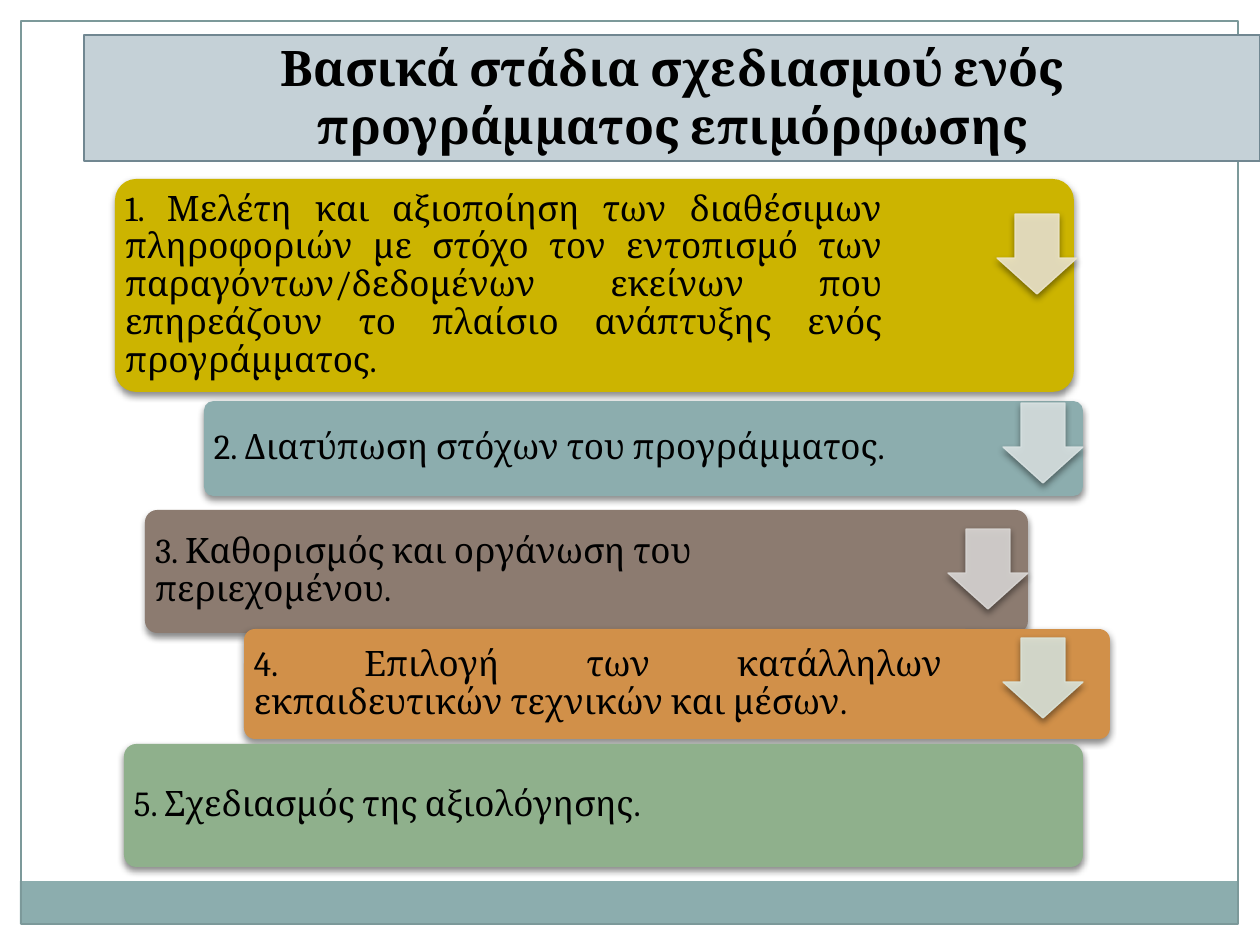
from lxml.etree import SubElement
from pptx import Presentation
from pptx.dml.color import RGBColor
from pptx.enum.shapes import MSO_SHAPE
from pptx.enum.text import MSO_ANCHOR, PP_ALIGN
from pptx.oxml.ns import qn
from pptx.util import Emu, Pt

PIXELS_PER_INCH = 126
SLIDE_SIZE = (1260, 945)
FONT = "Cambria"
COLORS = {
    "text": "000000", "shadow": "000000", "band": "8CADAE", "frame": "7C999A",
    "title": "C5D1D7", "title_line": "718791",
    "gold": "CCB400", "teal": "8CADAE", "brown": "8C7B70",
    "orange": "D19049", "green": "8FB08C",
    "gold_light": "ECE5CC", "teal_light": "DAE3E3",
    "brown_light": "DAD7D5", "green_light": "DBE4DA",
}
BAND = (20, 881, 1218, 43)
FRAME = (21, 21, 1217, 903)
TITLE = ("Βασικά στάδια σχεδιασμού ενός προγράμματος επιμόρφωσης", (84, 35, 1176, 126))
STAGES = [
    ("1. Μελέτη και αξιοποίηση των διαθέσιμων πληροφοριών με στόχο τον εντοπισμό των "
     "παραγόντων/δεδομένων εκείνων που επηρεάζουν το πλαίσιο ανάπτυξης ενός προγράμματος.",
     (115, 179, 959, 213), 777, "gold", PP_ALIGN.JUSTIFY),
    ("2. Διατύπωση στόχων του προγράμματος.",
     (204, 401, 879, 95), 718, "teal", PP_ALIGN.LEFT),
    ("3. Καθορισμός και οργάνωση του περιεχομένου.",
     (145, 510, 883, 123), 722, "brown", PP_ALIGN.LEFT),
    ("4. Επιλογή των κατάλληλων εκπαιδευτικών τεχνικών και μέσων.",
     (244, 629, 866, 110), 708, "orange", PP_ALIGN.JUSTIFY),
    ("5. Σχεδιασμός της αξιολόγησης.",
     (124, 744, 959, 123), 784, "green", PP_ALIGN.JUSTIFY),
]
ARROW_SIZE = 80
ARROWS = [
    (997, 214, "gold_light"), (1003, 403, "teal_light"),
    (948, 529, "brown_light"), (1003, 638, "green_light"),
]
STAGE_INSET = 10
STAGE_FRAME = {"word_wrap": True, "vertical_anchor": MSO_ANCHOR.MIDDLE}
STAGE_PARAGRAPH = {"line_spacing": 0.9, "space_after": Pt(7)}
TITLE_FRAME = {"word_wrap": True, "vertical_anchor": MSO_ANCHOR.BOTTOM}


def px(value):
    return Emu(round(value * 914400 / PIXELS_PER_INCH))


def color(name):
    return RGBColor.from_string(COLORS[name])


def apply(target, values):
    for name, value in values.items():
        setattr(target, name, value)


def set_opacity(fill_format, percent):
    for element in fill_format.iter(qn("a:srgbClr")):
        SubElement(element, qn("a:alpha"), val=str(percent * 1000))


def add_shadow(shape):
    effects = shape._element.spPr.find(qn("a:effectLst"))
    shadow = SubElement(effects, qn("a:outerShdw"), blurRad=str(Pt(4)), dist=str(Pt(2)),
                        dir="5400000", rotWithShape="0")
    shade = SubElement(shadow, qn("a:srgbClr"), val=COLORS["shadow"])
    SubElement(shade, qn("a:alpha"), val="45000")


def add_box(slide, preset, box, fill=None, line=None, adjustments=()):
    shape = slide.shapes.add_shape(preset, *map(px, box))
    shape.shadow.inherit = False
    for index, value in enumerate(adjustments):
        shape.adjustments[index] = value
    if fill:
        shape.fill.solid()
        shape.fill.fore_color.rgb = color(fill)
    else:
        shape.fill.background()
    if line:
        shape.line.color.rgb = color(line)
        shape.line.width = Pt(0.75)
    else:
        shape.line.fill.background()
    return shape


def write(shape, text, size, bold, frame_values, paragraph_values):
    frame = shape.text_frame
    apply(frame, frame_values)
    paragraph = frame.paragraphs[0]
    apply(paragraph, paragraph_values)
    run = paragraph.add_run()
    run.text = text
    apply(run.font, {"name": FONT, "size": Pt(size), "bold": bold})
    run.font.color.rgb = color("text")


def add_stage(slide, text, box, text_width, fill, alignment):
    left, top, _, height = box
    add_shadow(add_box(slide, MSO_SHAPE.ROUNDED_RECTANGLE, box, fill, adjustments=[0.1]))
    label = slide.shapes.add_textbox(*map(px, (left, top, text_width, height)))
    insets = {f"margin_{side}": px(STAGE_INSET) for side in ("left", "top", "right", "bottom")}
    write(label, text, 20, False, {**STAGE_FRAME, **insets},
          {**STAGE_PARAGRAPH, "alignment": alignment})


def add_arrow(slide, left, top, fill):
    arrow = add_box(slide, MSO_SHAPE.DOWN_ARROW, (left, top, ARROW_SIZE, ARROW_SIZE),
                    fill, fill, [0.55, 0.45])
    set_opacity(arrow._element.spPr, 90)
    add_shadow(arrow)


def main():
    presentation = Presentation()
    presentation.slide_width, presentation.slide_height = map(px, SLIDE_SIZE)
    slide = presentation.slides.add_slide(presentation.slide_layouts[6])
    add_box(slide, MSO_SHAPE.RECTANGLE, BAND, "band")
    add_box(slide, MSO_SHAPE.RECTANGLE, FRAME, line="frame")
    title_text, title_box = TITLE
    title = add_box(slide, MSO_SHAPE.RECTANGLE, title_box, "title", "title_line")
    write(title, title_text, 28, True, TITLE_FRAME, {"alignment": PP_ALIGN.CENTER})
    for stage in STAGES:
        add_stage(slide, *stage)
    for arrow in ARROWS:
        add_arrow(slide, *arrow)
    presentation.save("out.pptx")


if __name__ == "__main__":
    main()
